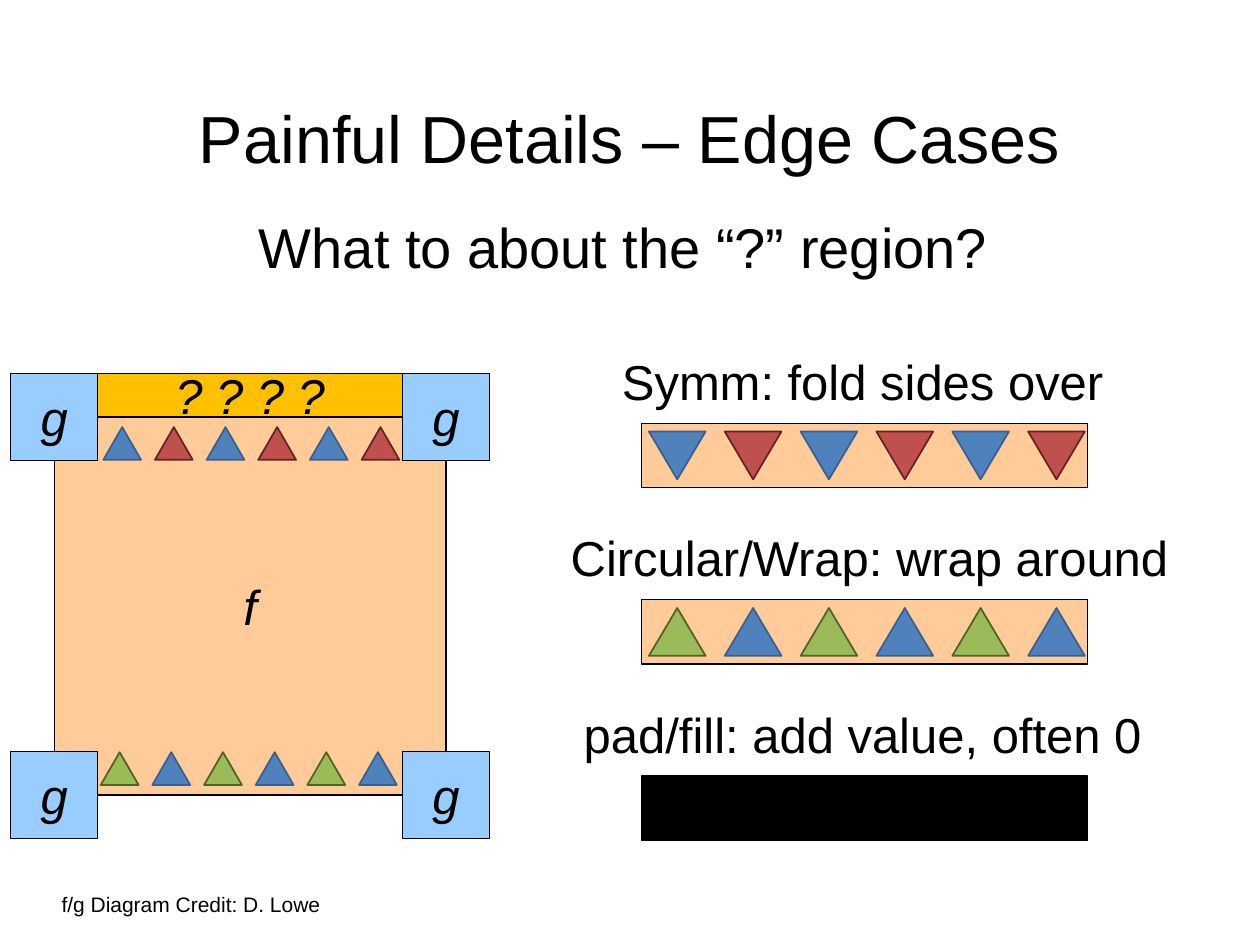
from pptx import Presentation
from pptx import util as u
from pptx.dml.color import RGBColor
from pptx.enum import shapes, text

BLACK, PEACH, SKY, AMBER = "000000", "FFCC99", "99CCFF", "FFC000"
# Triangle colours: fill and outline
BLUE, RED, GREEN = ("4F81BD", "3A5F8C"), ("C0504D", "632523"), ("9BBB59", "4F6228")
TOP_EDGE, BOTTOM_EDGE = [BLUE, RED] * 3, [GREEN, BLUE] * 3

# Right column: three methods on equal rows
ROW_TOP, ROW_STEP = 2.74, 1.4
BAR_X, BAR_W, BAR_H, BAR_DROP = 5.09, 3.54, 0.51, 0.62
# Left diagram: filter g centred on each corner of image f
F_X, F_Y, F_W, F_H, G = 0.43, 3.31, 3.11, 3.0, 0.69


def color(value):
    return RGBColor.from_string(value)


def box(x, y, w, h):
    return [u.Inches(v) for v in (x, y, w, h)]


def write(sp, words, size, align=text.PP_ALIGN.CENTER, italic=None,
          anchor=text.MSO_ANCHOR.TOP, wrap=True, spacing=None):
    tf = sp.text_frame
    frame = {"word_wrap": wrap, "vertical_anchor": anchor,
             "auto_size": text.MSO_AUTO_SIZE.NONE}
    for name, value in frame.items():
        setattr(tf, name, value)
    p = tf.paragraphs[0]
    p.alignment, p.line_spacing = align, spacing
    r = p.add_run()
    r.text = words
    for name, value in {"name": "Arial", "size": u.Pt(size), "italic": italic}.items():
        setattr(r.font, name, value)
    r.font.color.rgb = color(BLACK)


def label(parent, place, words, size, **fmt):
    write(parent.shapes.add_textbox(*box(*place)), words, size, **fmt)


def shape(parent, kind, place, fill, line=BLACK, width=0.75):
    sp = parent.shapes.add_shape(kind, *box(*place))
    sp.shadow.inherit = False
    sp.fill.solid()
    sp.fill.fore_color.rgb = color(fill)
    sp.line.color.rgb = color(line)
    sp.line.width = u.Pt(width)
    return sp


def block(parent, place, fill, words=None):
    sp = shape(parent, shapes.MSO_SHAPE.RECTANGLE, place, fill)
    if words:
        write(sp, words, 28, italic=True, anchor=text.MSO_ANCHOR.MIDDLE, wrap=False)


def triangles(parent, x, y, step, w, h, colors, flipped=False):
    for i, (fill, line) in enumerate(colors):
        sp = shape(parent, shapes.MSO_SHAPE.ISOSCELES_TRIANGLE,
                   (x + i * step, y, w, h), fill, line, 1)
        if flipped:
            sp._element.spPr.get_or_add_xfrm().set("flipV", "1")


def method(s, row, words, fill, colors=(), flipped=False):
    group = s.shapes.add_group_shape()
    y = ROW_TOP + row * ROW_STEP
    label(group, (4.25, y, 5.3, 0.57), words, 28)
    block(group, (BAR_X, y + BAR_DROP, BAR_W, BAR_H), fill)
    triangles(group, BAR_X + 0.06, y + BAR_DROP + 0.065, 0.602, 0.45, 0.38,
              colors, flipped)


def filter_diagram(s):
    group = s.shapes.add_group_shape()
    block(group, (F_X, F_Y, F_W, F_H), PEACH, "f")
    for y in (F_Y, F_Y + F_H):
        for x in (F_X + F_W, F_X):
            block(group, (x - G / 2, y - G / 2, G, G), SKY, "g")
    # Unknown region between the two upper filters
    block(group, (F_X + G / 2, F_Y - G / 2, F_W - G, G / 2), AMBER, "? ? ? ?")
    # Pixels along the top and bottom edges
    triangles(group, 0.82, 3.39, 0.41, 0.3, 0.26, TOP_EDGE)
    triangles(group, 0.8, 5.97, 0.41, 0.3, 0.26, BOTTOM_EDGE)


def main():
    prs = Presentation()
    prs.slide_width, prs.slide_height = u.Inches(10), u.Inches(7.5)
    s = prs.slides.add_slide(prs.slide_layouts[5])

    # Title and question
    title = s.shapes.title
    title.left, title.top, title.width, title.height = box(0.69, 0.4, 8.62, 1.45)
    write(title, "Painful Details – Edge Cases", 38,
          anchor=text.MSO_ANCHOR.MIDDLE, spacing=0.9)
    label(s, (1.42, 1.64, 7.06, 0.64), "What to about the “?” region?", 32)

    # Padding methods beside the filter diagram
    method(s, 0, "Symm: fold sides over ", PEACH, TOP_EDGE, flipped=True)
    method(s, 1, "Circular/Wrap: wrap around", PEACH, BOTTOM_EDGE)
    method(s, 2, "pad/fill: add value, often 0 ", BLACK)
    filter_diagram(s)

    # Credit
    label(s, (0.39, 7.03, 6.03, 0.3), "f/g Diagram Credit: D. Lowe", 12,
          align=text.PP_ALIGN.LEFT)
    prs.save("out.pptx")


if __name__ == "__main__":
    main()
